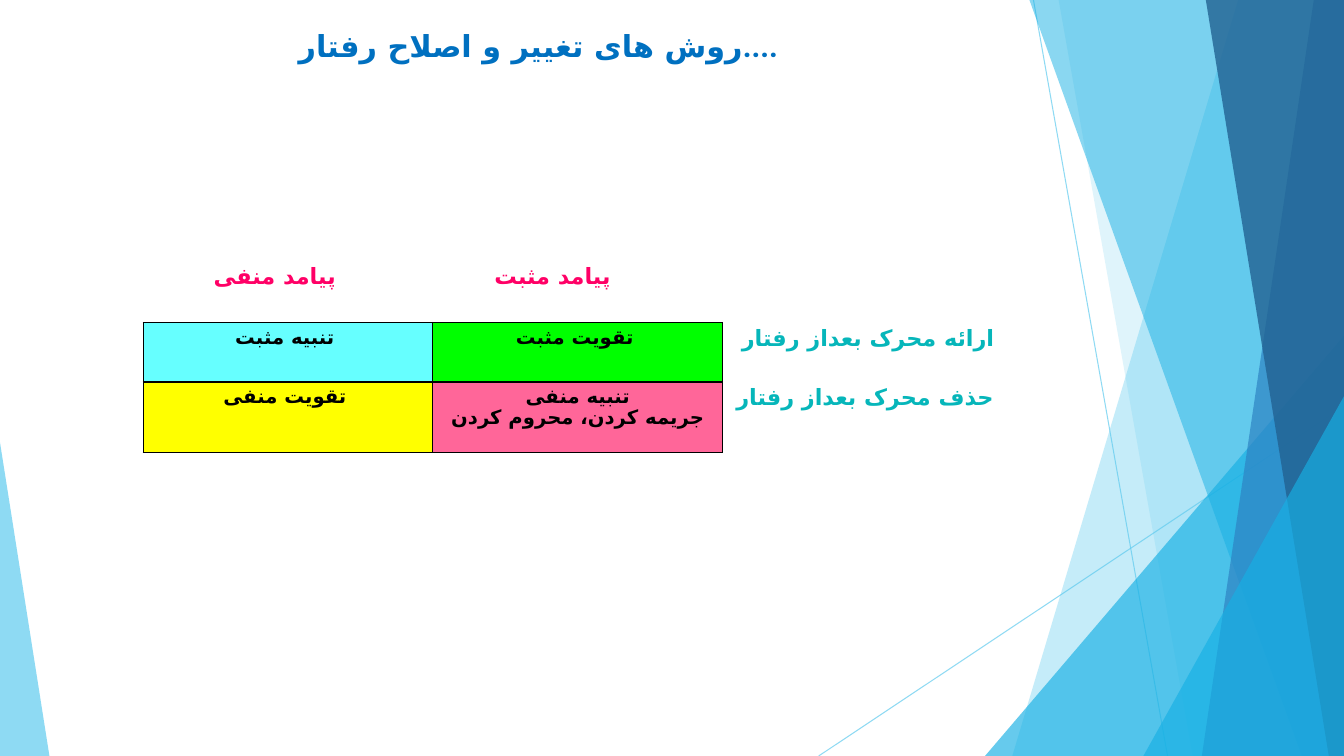
"""Build the slide on methods of changing behaviour."""
from dataclasses import dataclass

from lxml.etree import SubElement
from pptx import Presentation
from pptx.dml.color import RGBColor as RGB
from pptx.enum.shapes import MSO_CONNECTOR as Conn, MSO_SHAPE as Geo
from pptx.enum.text import MSO_ANCHOR as Anchor, MSO_AUTO_SIZE as Auto, PP_ALIGN as Align
from pptx.oxml import parse_xml
from pptx.oxml.ns import nsdecls, qn
from pptx.util import Inches, Pt

FONT, ARABIC_FONT = "Roboto", "DejaVu Sans"
WIDTH, HEIGHT = 13.33, 7.5
NO_STYLE = "{2D5ABB26-0587-4C30-8999-92F81FD0307C}"
COLORS = {
    "sky": "5FCBEF", "azure": "17B0E4", "blue": "2E83C3", "navy": "226292",
    "title": "0070C0", "outcome": "FF0066", "stimulus": "06B6BA", "black": "000000",
    "cyan": "66FFFF", "green": "00FF00", "yellow": "FFFF00", "pink": "FF6699",
}


@dataclass
class Ray:
    """A thin line between two points."""
    x1: float
    y1: float
    x2: float
    y2: float


@dataclass
class Band:
    """A full-height band with a slanted left side, reaching the right edge."""
    top: float
    bottom: float
    color: str
    alpha: int


@dataclass
class Corner:
    """A right triangle standing on the bottom edge."""
    x: float
    width: float
    height: float
    peak: int
    color: str
    alpha: int


@dataclass
class Entry:
    """The content and look of one table cell."""
    text: str
    color: str = "black"
    size: int = 14
    right: float = 0.16
    fill: str = ""
    edges: str = "LRTB"


DECOR = [
    Ray(10.25, 0, 11.58, HEIGHT),
    Ray(WIDTH, 4.03, 8.12, HEIGHT),
    Band(12.28, 10.04, "sky", 36),
    Band(10.5, 11.83, "sky", 20),
    Corner(9.77, 3.56, 4.17, 1, "azure", 66),
    Band(10.21, 12.91, "azure", 50),
    Band(13.03, 11.92, "blue", 70),
    Band(11.96, 13.18, "navy", 80),
    Corner(11.34, 1.99, 3.57, 1, "azure", 66),
    Corner(0, 0.49, 3.11, 0, "sky", 70),
]
COLUMNS = [2.87, 2.88, 2.88]
ROWS = [0.61, 0.59, 0.7]
ENTRIES = [
    [Entry("پیامد منفی", "outcome", 16, 0.36, edges="B"),
     Entry("پیامد مثبت", "outcome", 16, 0.6, edges="B"),
     Entry("", edges="")],
    [Entry("تنبیه مثبت", fill="cyan"),
     Entry("تقویت مثبت", fill="green"),
     Entry("ارائه محرک بعداز رفتار", "stimulus", 16, 0.1, edges="L")],
    [Entry("تقویت منفی", fill="yellow"),
     Entry("تنبیه منفی\nجریمه کردن، محروم کردن", right=0.1, fill="pink"),
     Entry("حذف محرک بعداز رفتار", "stimulus", 16, edges="L")],
]


def rgb(name: str) -> RGB:
    """Return a named colour."""
    return RGB.from_string(COLORS[name])


def set_alpha(parent, percent: int) -> None:
    """Make the solid fill inside an element translucent."""
    color = parent.find(qn("a:solidFill"))[0]
    SubElement(color, qn("a:alpha"), val=str(percent * 1000))


def format_text(tf, size: float, color: str) -> None:
    """Centre and style every paragraph of a text frame."""
    for p in tf.paragraphs:
        p.alignment = Align.CENTER
        p.font.name, p.font.size, p.font.bold = FONT, Pt(size), True
        p.font.color.rgb = rgb(color)
        props = p._p.pPr.find(qn("a:defRPr"))
        SubElement(props, qn("a:cs"), typeface=ARABIC_FONT)


def add_ray(s, ray: Ray) -> None:
    """Draw a thin translucent line."""
    ends = [Inches(v) for v in (ray.x1, ray.y1, ray.x2, ray.y2)]
    c = s.shapes.add_connector(Conn.STRAIGHT, *ends)
    c.line.color.rgb = rgb("sky")
    c.line.width = Pt(0.75)
    set_alpha(c.line._ln, 70)
    SubElement(c._element.spPr, qn("a:effectLst"))


def add_facet(s, facet: Band | Corner) -> None:
    """Draw a translucent band or corner."""
    if isinstance(facet, Band):
        right, base = Inches(WIDTH), Inches(HEIGHT)
        fb = s.shapes.build_freeform(Inches(facet.top), 0)
        fb.add_line_segments([(right, 0), (right, base), (Inches(facet.bottom), base)])
        sp = fb.convert_to_shape()
    else:
        box = (facet.x, HEIGHT - facet.height, facet.width, facet.height)
        sp = s.shapes.add_shape(Geo.ISOSCELES_TRIANGLE, *map(Inches, box))
        sp.adjustments[0] = facet.peak
    sp.shadow.inherit = False
    sp.line.fill.background()
    sp.fill.solid()
    sp.fill.fore_color.rgb = rgb(facet.color)
    set_alpha(sp._element.spPr, facet.alpha)


def fill_cell(cell, entry: Entry) -> None:
    """Write, colour and border one cell."""
    tf = cell.text_frame
    tf.text = entry.text
    format_text(tf, entry.size, entry.color)
    for p in tf.paragraphs:
        p.line_spacing = 0.9
    cell.margin_right = Inches(entry.right)
    if entry.fill:
        cell.fill.solid()
        cell.fill.fore_color.rgb = rgb(entry.fill)
    else:
        cell.fill.background()
    for i, edge in enumerate(entry.edges):
        cell._tc.tcPr.insert(i, parse_xml(
            f'<a:ln{edge} {nsdecls("a")} w="12700"><a:solidFill>'
            f'<a:srgbClr val="{COLORS["black"]}"/></a:solidFill></a:ln{edge}>'))


def add_grid(s) -> None:
    """Add the table of outcomes and stimuli."""
    box = (1.42, 2.59, sum(COLUMNS), sum(ROWS))
    gf = s.shapes.add_table(len(ROWS), len(COLUMNS), *map(Inches, box))
    table = gf.table
    table.first_row = table.horz_banding = False
    table._tbl.tblPr.find(qn("a:tableStyleId")).text = NO_STYLE
    for column, width in zip(table.columns, COLUMNS):
        column.width = Inches(width)
    for row, height, entries in zip(table.rows, ROWS, ENTRIES):
        row.height = Inches(height)
        for cell, entry in zip(row.cells, entries):
            fill_cell(cell, entry)


def add_title(s) -> None:
    """Place and write the title."""
    title = s.shapes.title
    title.left, title.top, title.width, title.height = map(Inches, (0.54, 0.27, 9.6, 0.69))
    tf = title.text_frame
    tf.text = "روش های تغییر و اصلاح رفتار...."
    tf.auto_size = Auto.NONE
    tf.vertical_anchor = Anchor.TOP
    tf.margin_top = 0
    format_text(tf, 21.6, "title")


def main() -> None:
    """Build and save the presentation."""
    prs = Presentation()
    prs.slide_width, prs.slide_height = Inches(WIDTH), Inches(HEIGHT)
    s = prs.slides.add_slide(prs.slide_layouts[5])
    for item in DECOR:
        if isinstance(item, Ray):
            add_ray(s, item)
        else:
            add_facet(s, item)
    add_title(s)
    add_grid(s)
    prs.save("out.pptx")


if __name__ == "__main__":
    main()
